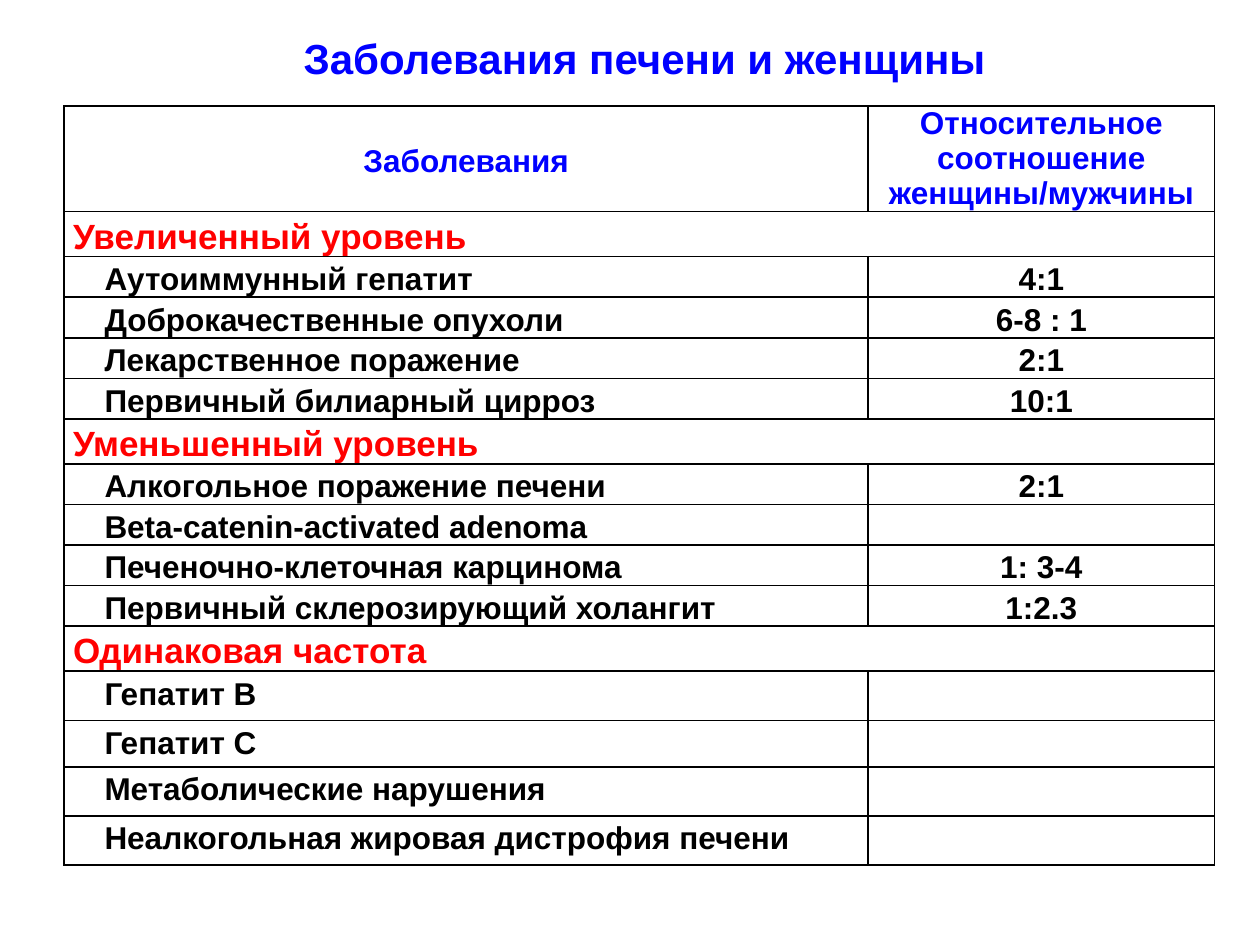
from dataclasses import dataclass

from lxml import etree
from pptx import Presentation
from pptx.dml.color import RGBColor
from pptx.enum.text import MSO_ANCHOR, PP_ALIGN
from pptx.oxml.ns import qn
from pptx.util import Inches, Pt

CENTER, LEFT = PP_ALIGN.CENTER, PP_ALIGN.LEFT
TOP, MIDDLE = MSO_ANCHOR.TOP, MSO_ANCHOR.MIDDLE


@dataclass(frozen=True)
class Theme:
    font: str = "Arial"
    blue: str = "0000FF"
    red: str = "FF0000"
    black: str = "000000"
    white: str = "FFFFFF"
    title_size: int = 24
    section_size: int = 20
    body_size: int = 18
    border_width: int = 1


@dataclass(frozen=True)
class Disease:
    name: str
    ratio: str = ""
    height: float = 0.32


@dataclass(frozen=True)
class Section:
    title: str
    diseases: tuple[Disease, ...]
    height: float = 0.35


@dataclass(frozen=True)
class TextStyle:
    color: str
    size: int
    alignment: PP_ALIGN = LEFT
    line_spacing: float = 1.15
    indent: float = 0
    anchor: MSO_ANCHOR = TOP


THEME = Theme()
HEADING = TextStyle(THEME.blue, THEME.body_size, CENTER, anchor=MIDDLE)
RATIO_HEADING = TextStyle(THEME.blue, THEME.body_size, CENTER, 1.0)
SECTION = TextStyle(THEME.red, THEME.section_size)
DISEASE = TextStyle(THEME.black, THEME.body_size, indent=0.25)
RATIO = TextStyle(THEME.black, THEME.body_size, CENTER)

HEADER_HEIGHT = 0.83
COLUMN_WIDTHS = (6.38, 2.75)
SECTIONS = (
    Section("Увеличенный уровень", (
        Disease("Аутоиммунный гепатит", "4:1"),
        Disease("Доброкачественные опухоли", "6-8 : 1"),
        Disease("Лекарственное поражение", "2:1"),
        Disease("Первичный билиарный цирроз", "10:1"),
    )),
    Section("Уменьшенный уровень", (
        Disease("Алкогольное поражение печени", "2:1"),
        Disease("Beta-catenin-activated adenoma"),
        Disease("Печеночно-клеточная карцинома", "1: 3-4"),
        Disease("Первичный склерозирующий холангит", "1:2.3"),
    )),
    Section("Одинаковая частота", (
        Disease("Гепатит В", height=0.39),
        Disease("Гепатит C", height=0.37),
        Disease("Метаболические нарушения", height=0.39),
        Disease("Неалкогольная жировая дистрофия печени", height=0.39),
    )),
)


def format_paragraph(paragraph, style: TextStyle) -> None:
    paragraph.alignment = style.alignment
    paragraph.line_spacing = style.line_spacing
    if style.indent:
        properties = paragraph._p.get_or_add_pPr()
        properties.set("marL", str(Inches(style.indent)))
        properties.set("indent", "0")
    font = paragraph.font
    font.name = THEME.font
    font.size = Pt(style.size)
    font.bold = True
    font.color.rgb = RGBColor.from_string(style.color)


def add_borders(cell) -> None:
    properties = cell._tc.get_or_add_tcPr()
    for side in ("lnL", "lnR", "lnT", "lnB"):
        line = etree.SubElement(properties, qn(f"a:{side}"), w=str(Pt(THEME.border_width)))
        fill = etree.SubElement(line, qn("a:solidFill"))
        etree.SubElement(fill, qn("a:srgbClr"), val=THEME.black)


def fill_cell(cell, text: str, style: TextStyle) -> None:
    cell.margin_left = cell.margin_right = Inches(0.07)
    cell.margin_top = cell.margin_bottom = 0
    cell.vertical_anchor = style.anchor
    add_borders(cell)
    cell.fill.solid()
    cell.fill.fore_color.rgb = RGBColor.from_string(THEME.white)
    cell.text = text
    format_paragraph(cell.text_frame.paragraphs[0], style)


def add_title(slide, text: str) -> None:
    title = slide.shapes.title
    title.left, title.top = Inches(0.98), Inches(0.21)
    title.width, title.height = Inches(8.27), Inches(0.5)
    title.text_frame.text = text
    title.text_frame.word_wrap = True
    format_paragraph(title.text_frame.paragraphs[0],
                     TextStyle(THEME.blue, THEME.title_size, CENTER, 1.0))


def add_disease_table(slide) -> None:
    rows = [(HEADER_HEIGHT, ("Заболевания", HEADING),
             ("Относительное соотношение женщины/мужчины", RATIO_HEADING))]
    for section in SECTIONS:
        rows.append((section.height, (section.title, SECTION), ("", SECTION)))
        rows.extend((disease.height, (disease.name, DISEASE), (disease.ratio, RATIO))
                    for disease in section.diseases)

    total_height = sum(row[0] for row in rows)
    table = slide.shapes.add_table(
        len(rows), len(COLUMN_WIDTHS), Inches(0.51), Inches(0.84),
        Inches(sum(COLUMN_WIDTHS)), Inches(total_height)).table
    table.first_row = False
    table.horz_banding = False
    for column, width in zip(table.columns, COLUMN_WIDTHS):
        column.width = Inches(width)
    for row_index, (height, *contents) in enumerate(rows):
        table.rows[row_index].height = Inches(height)
        for column_index, (text, style) in enumerate(contents):
            fill_cell(table.cell(row_index, column_index), text, style)
        if contents[0][1] is SECTION:
            table.cell(row_index, 0).merge(table.cell(row_index, 1))


def main() -> None:
    presentation = Presentation()
    presentation.slide_width = Inches(10)
    presentation.slide_height = Inches(7.5)
    slide = presentation.slides.add_slide(presentation.slide_layouts[5])
    add_title(slide, "Заболевания печени и женщины")
    add_disease_table(slide)
    presentation.save("out.pptx")


if __name__ == "__main__":
    main()
